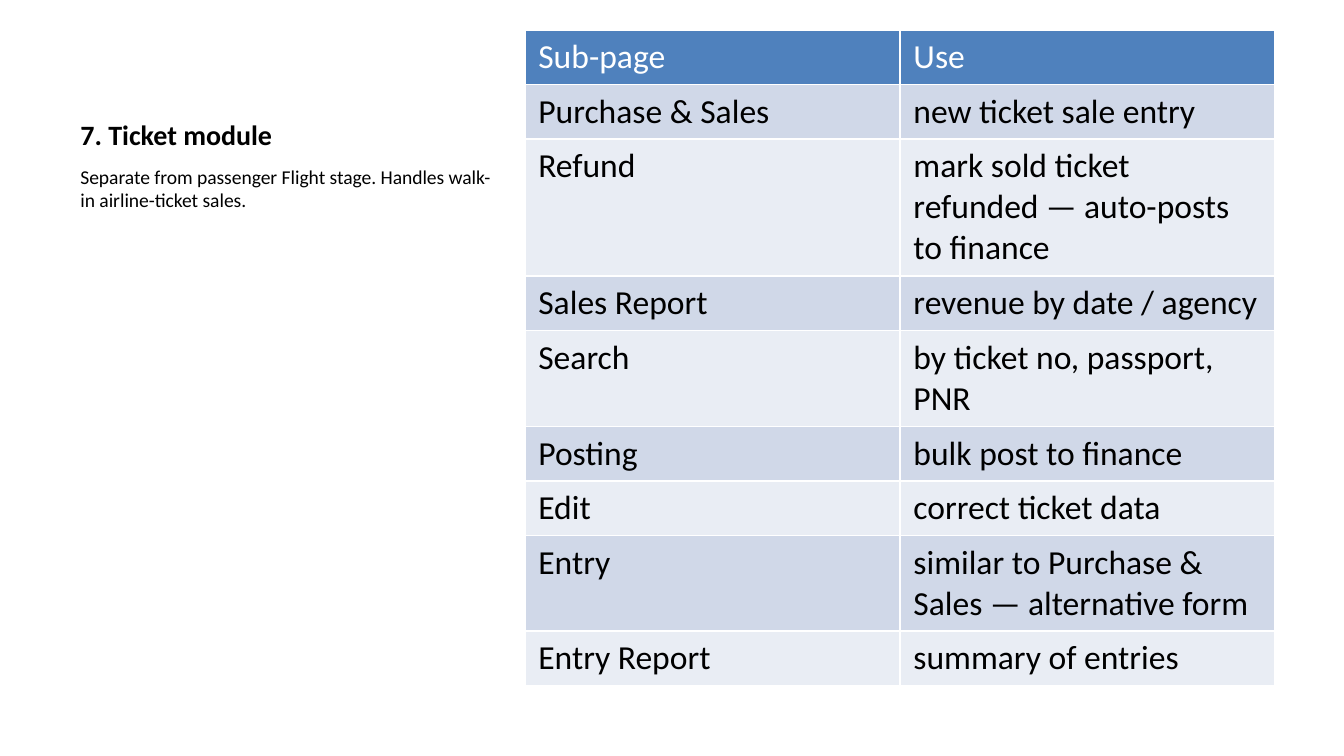
from pptx import Presentation
from pptx.dml.color import RGBColor
from pptx.enum.text import MSO_ANCHOR
from pptx.util import Cm, Pt

TOP, BOTTOM = MSO_ANCHOR.TOP, MSO_ANCHOR.BOTTOM

# Sub-page, its use, and the number of lines the use takes
SUB_PAGES = [
    ("Sub-page", "Use", 1),
    ("Purchase & Sales", "new ticket sale entry", 1),
    ("Refund", "mark sold ticket refunded — auto-posts to finance", 3),
    ("Sales Report", "revenue by date / agency", 1),
    ("Search", "by ticket no, passport, PNR", 2),
    ("Posting", "bulk post to finance", 1),
    ("Edit", "correct ticket data", 1),
    ("Entry", "similar to Purchase & Sales — alternative form", 2),
    ("Entry Report", "summary of entries", 1),
]


def color(hex_code):
    return RGBColor.from_string(hex_code)


class ModuleSlide:
    FONT = "Calibri"
    TEXT, HEADER_TEXT = "000000", "FFFFFF"
    HEADER_FILL, BANDS = "4F81BD", ("E9EDF4", "D0D8E8")
    CELL_PADDING, LINE_HEIGHT = 0.25, 0.78

    def __init__(self, slide):
        self.slide = slide

    def style(self, paragraph, size, hex_code, bold=False):
        font = paragraph.font
        formats = {"name": self.FONT, "size": Pt(size), "bold": bold}
        for name, value in formats.items():
            setattr(font, name, value)
        font.color.rgb = color(hex_code)

    def text(self, words, left, top, width, height, size, bold=False, anchor=TOP):
        box = self.slide.shapes.add_textbox(Cm(left), Cm(top), Cm(width), Cm(height))
        frame = box.text_frame
        frame.word_wrap = True
        frame.vertical_anchor = anchor
        frame.text = words
        self.style(frame.paragraphs[0], size, self.TEXT, bold)

    def table(self, rows, left, top, width, size):
        """Draw rows of (name, use, line count); the first row is the header."""
        heights = [self.CELL_PADDING + self.LINE_HEIGHT * lines for *_, lines in rows]
        frame = self.slide.shapes.add_table(
            len(rows), 2, Cm(left), Cm(top), Cm(width), Cm(sum(heights)))
        for index, (*words, _) in enumerate(rows):
            frame.table.rows[index].height = Cm(heights[index])
            fill = self.BANDS[index % 2] if index else self.HEADER_FILL
            text_color = self.TEXT if index else self.HEADER_TEXT
            for cell, word in zip(frame.table.rows[index].cells, words):
                cell.text = word
                cell.fill.solid()
                cell.fill.fore_color.rgb = color(fill)
                self.style(cell.text_frame.paragraphs[0], size, text_color)


def main():
    deck = Presentation()
    deck.slide_width, deck.slide_height = Cm(25.4), Cm(14.29)
    module = ModuleSlide(deck.slides.add_slide(deck.slide_layouts[6]))
    module.text("7. Ticket module", 1.27, 0.57, 8.36, 2.42, 15, bold=True, anchor=BOTTOM)
    module.text(
        "Separate from passenger Flight stage. Handles walk-in airline-ticket sales.",
        1.27, 2.99, 8.36, 9.77, 10.5)
    module.table(SUB_PAGES, 9.92, 0.57, 14.18, 18)
    deck.save("out.pptx")


if __name__ == "__main__":
    main()
